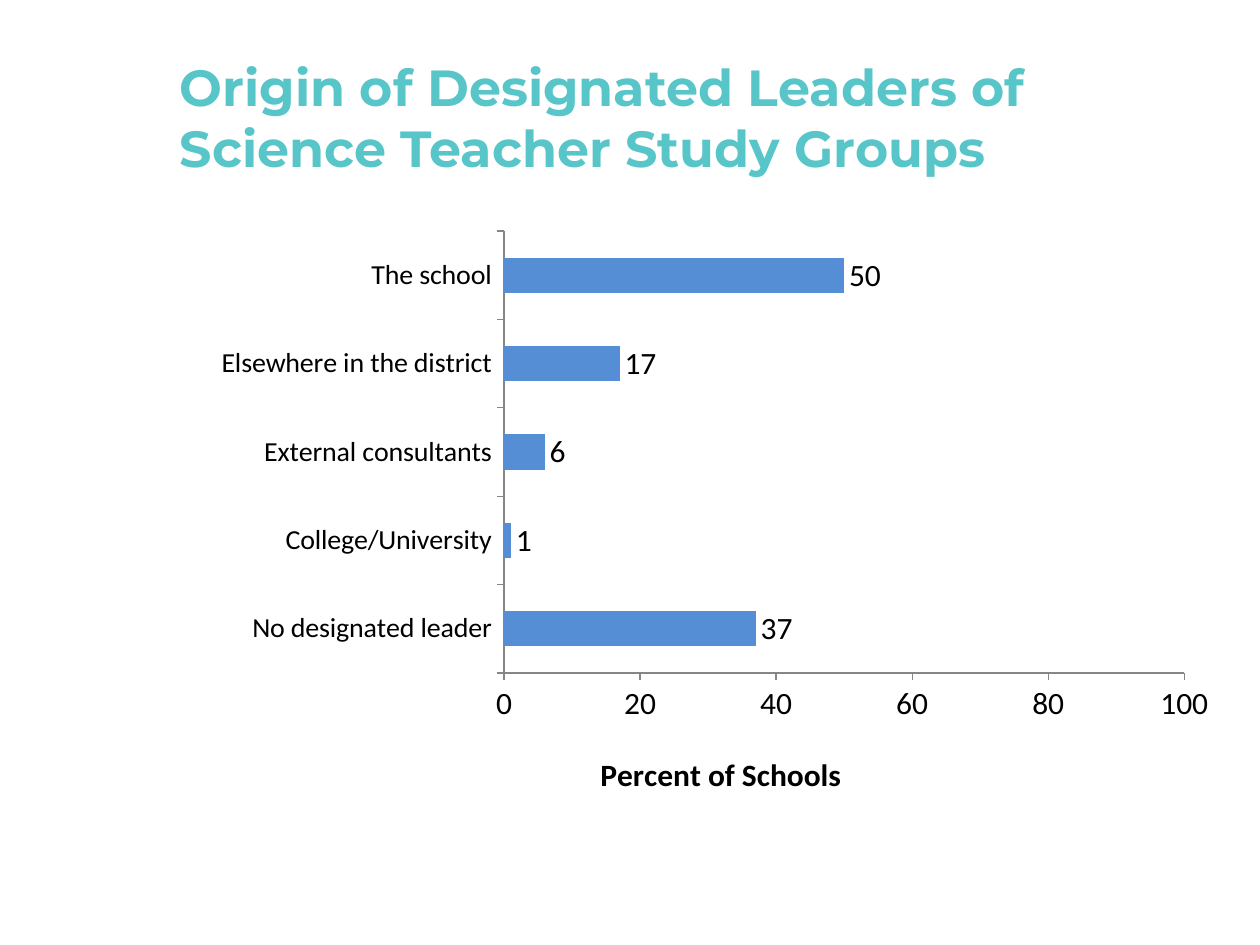
"""Build a slide with a bar chart on the leaders of science teacher study groups."""
from typing import Any, NamedTuple

from lxml import etree
from pptx import Presentation
from pptx.chart.data import CategoryChartData
from pptx.dml.color import RGBColor
from pptx.enum.chart import XL_CHART_TYPE, XL_LABEL_POSITION, XL_TICK_MARK
from pptx.enum.text import MSO_ANCHOR
from pptx.oxml.ns import qn
from pptx.util import Inches, Pt

BAR_CLUSTERED = XL_CHART_TYPE.BAR_CLUSTERED
OUTSIDE_END = XL_LABEL_POSITION.OUTSIDE_END
TICK_OUTSIDE, TICK_NONE = XL_TICK_MARK.OUTSIDE, XL_TICK_MARK.NONE
MIDDLE = MSO_ANCHOR.MIDDLE

SLIDE_WIDTH, SLIDE_HEIGHT = Inches(10), Inches(7.5)
TEAL, BLUE, BLACK, GRAY = "58C5C9", "558ED5", "000000", "868686"


class Area(NamedTuple):
    """A rectangle given as shares of the slide's size."""

    left: float
    top: float
    width: float
    height: float

    def lengths(self) -> tuple[int, int, int, int]:
        """Return the rectangle in slide units."""
        return (
            int(self.left * SLIDE_WIDTH),
            int(self.top * SLIDE_HEIGHT),
            int(self.width * SLIDE_WIDTH),
            int(self.height * SLIDE_HEIGHT),
        )


class Origin(NamedTuple):
    """Where leaders come from and the percent of schools."""

    name: str
    percent: int


TITLE_AREA = Area(0.133, 0.04, 0.817, 0.167)
CHART_AREA = Area(0.067, 0.223, 0.9, 0.627)
ORIGINS = [
    Origin("No designated leader", 37),
    Origin("College/University", 1),
    Origin("External consultants", 6),
    Origin("Elsewhere in the district", 17),
    Origin("The school", 50),
]


def color(value: str) -> RGBColor:
    """Turn a hex string into a colour."""
    return RGBColor.from_string(value)


def format_font(font: Any, *, name: str, size: float, fill: str, bold: bool = False) -> None:
    """Set the typeface, size, colour and weight of a font."""
    font.name, font.size, font.bold = name, Pt(size), bold
    font.color.rgb = color(fill)


def add_text(slide: Any, text: str, area: Area, **font_format: Any) -> None:
    """Add a wrapped, vertically centred text box."""
    frame = slide.shapes.add_textbox(*area.lengths()).text_frame
    frame.word_wrap = True
    frame.vertical_anchor = MIDDLE
    run = frame.paragraphs[0].add_run()
    run.text = text
    format_font(run.font, **font_format)


def place_manually(element: Any, index: int, **settings: Any) -> None:
    """Give a chart element a manual layout as its child at the index."""
    for old_layout in element.findall(qn("c:layout")):
        element.remove(old_layout)
    layout = etree.Element(qn("c:layout"))
    manual = etree.SubElement(layout, qn("c:manualLayout"))
    for tag, value in settings.items():
        etree.SubElement(manual, qn(f"c:{tag}")).set("val", str(value))
    element.insert(index, layout)


def format_axis(axis: Any, size: float) -> None:
    """Set the ticks, line and label font of an axis."""
    axis.has_major_gridlines = False
    axis.major_tick_mark, axis.minor_tick_mark = TICK_OUTSIDE, TICK_NONE
    axis.format.line.color.rgb = color(GRAY)
    axis.format.line.width = Pt(0.75)
    format_font(axis.tick_labels.font, name="Calibri", size=size, fill=BLACK)


def add_origin_chart(slide: Any, origins: list[Origin], area: Area) -> None:
    """Add the bar chart of leader origins."""
    data = CategoryChartData(number_format="General")
    data.categories = [origin.name for origin in origins]
    data.add_series("Series 1", [origin.percent for origin in origins])
    chart = slide.shapes.add_chart(BAR_CLUSTERED, *area.lengths(), data).chart
    chart.has_legend = chart.has_title = False
    format_font(chart.font, name="Calibri", size=18, fill=BLACK)

    plot = chart.plots[0]
    plot.gap_width, plot.vary_by_categories = 150, False
    fill = plot.series[0].format.fill
    fill.solid()
    fill.fore_color.rgb = color(BLUE)
    plot.has_data_labels = True
    labels = plot.data_labels
    labels.show_value, labels.position = True, OUTSIDE_END
    format_font(labels.font, name="Calibri", size=18, fill=BLACK)

    format_axis(chart.category_axis, 16)
    value_axis = chart.value_axis
    format_axis(value_axis, 18)
    value_axis.minimum_scale, value_axis.maximum_scale, value_axis.major_unit = 0, 100, 20
    axis_title = value_axis.axis_title
    paragraph = axis_title.text_frame.paragraphs[0]
    run = paragraph.add_run()
    run.text = "Percent of Schools"
    format_font(run.font, name="Calibri", size=18, fill=BLACK, bold=True)

    place_manually(axis_title._element, 1, xMode="edge", yMode="edge", x=0.45, y=0.92)
    plot_area = chart._chartSpace.chart.plotArea
    place_manually(plot_area, 0, layoutTarget="inner", xMode="edge", yMode="edge",
                   x=0.37, y=0.035, w=0.6, h=0.758)


def main() -> None:
    """Build and save the presentation."""
    presentation = Presentation()
    presentation.slide_width, presentation.slide_height = SLIDE_WIDTH, SLIDE_HEIGHT
    slide = presentation.slides.add_slide(presentation.slide_layouts[6])
    add_origin_chart(slide, ORIGINS, CHART_AREA)
    add_text(slide, "Origin of Designated Leaders of Science Teacher Study Groups",
             TITLE_AREA, name="Montserrat", size=29, fill=TEAL, bold=True)
    presentation.save("out.pptx")


if __name__ == "__main__":
    main()
